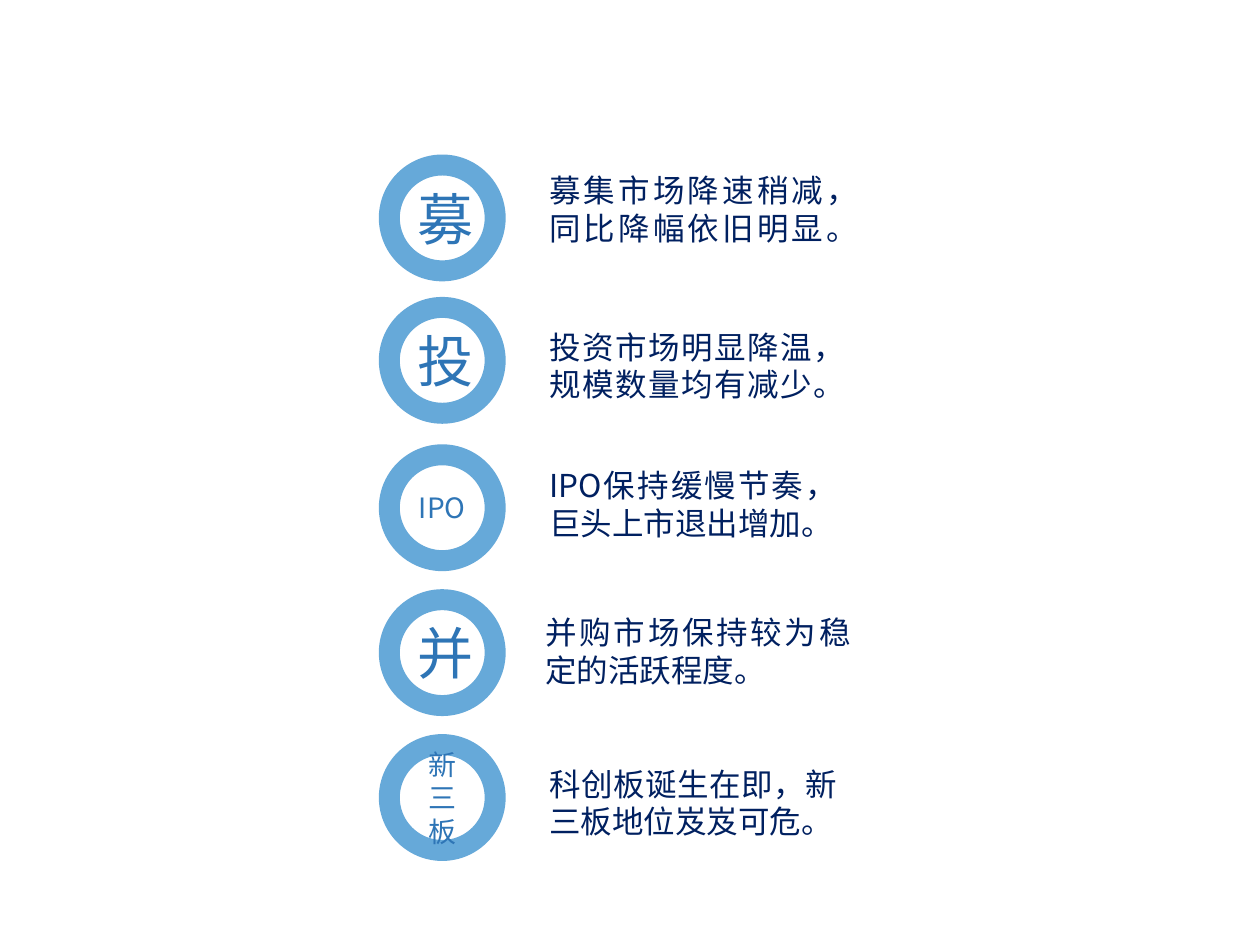
from lxml import etree
from pptx import Presentation
from pptx.dml.color import RGBColor
from pptx.enum.shapes import MSO_SHAPE
from pptx.enum.text import MSO_ANCHOR, MSO_AUTO_SIZE, PP_ALIGN
from pptx.oxml.ns import qn
from pptx.util import Pt

OVAL = MSO_SHAPE.OVAL
MIDDLE = MSO_ANCHOR.MIDDLE
FIT_SHAPE = MSO_AUTO_SIZE.SHAPE_TO_FIT_TEXT
CENTER, JUSTIFY = PP_ALIGN.CENTER, PP_ALIGN.JUSTIFY

RING_BLUE = RGBColor(0x00, 0x70, 0xC0)
LABEL_BLUE = RGBColor(0x2E, 0x75, 0xB6)
NAVY = RGBColor(0x00, 0x20, 0x60)
LABEL_FONT = "Noto Sans CJK JP"
BODY_FONT = "Noto Sans CJK SC"

RING_LEFT, RING_SIZE, RING_WIDTH = 222.5, 60.5, 12
RING_OPACITY = 60
NOTE_HEIGHT = 51

# label, label size, ring top, note, note left, note top, note width
MARKET_ROWS = [
    ("募", 32, 94.3, "募集市场降速稍减，同比降幅依旧明显。", 306.7, 94.3, 172.8),
    ("投", 32, 175.7, "投资市场明显降温，规模数量均有减少。", 306.7, 183.6, 165.6),
    ("IPO", 16, 259.9, "IPO保持缓慢节奏，巨头上市退出增加。", 306.7, 262.8, 178.6),
    ("并", 32, 342.7, "并购市场保持较为稳定的活跃程度。", 304.6, 347, 188.6),
    ("新三板", 16, 425.5, "科创板诞生在即，新三板地位岌岌可危。", 306.7, 433.4, 178.6),
]


def write_text(frame, text, *, size, font, color, align):
    """Write one formatted paragraph into a text frame."""
    frame.word_wrap = True
    para = frame.paragraphs[0]
    para.alignment = align
    span = para.add_run()
    span.text = text
    span.font.size = Pt(size)
    span.font.name = font
    span.font.color.rgb = color
    east_asian = etree.SubElement(span.font._element, qn("a:ea"))
    east_asian.set("typeface", font)


def add_ring(page, label, size, left, top, diameter):
    """Draw a translucent ring with its label in the given square."""
    ring = page.shapes.add_shape(OVAL, Pt(left), Pt(top), Pt(diameter), Pt(diameter))
    ring.shadow.inherit = False
    ring.fill.background()
    ring.line.width = Pt(RING_WIDTH)
    ring.line.color.rgb = RING_BLUE
    color = ring.line._ln.find(".//" + qn("a:srgbClr"))
    etree.SubElement(color, qn("a:alpha")).set("val", str(RING_OPACITY * 1000))
    ring.text_frame.vertical_anchor = MIDDLE
    write_text(ring.text_frame, label, size=size, font=LABEL_FONT,
               color=LABEL_BLUE, align=CENTER)


def add_note(page, text, left, top, width, height):
    """Place a justified market note in the given box."""
    box = page.shapes.add_textbox(Pt(left), Pt(top), Pt(width), Pt(height))
    write_text(box.text_frame, text, size=18, font=BODY_FONT,
               color=NAVY, align=JUSTIFY)
    box.text_frame.auto_size = FIT_SHAPE


def main():
    """Build the market summary slide."""
    deck = Presentation()
    deck.slide_width, deck.slide_height = Pt(720), Pt(540)
    page = deck.slides.add_slide(deck.slide_layouts[6])
    for label, size, ring_top, note, left, top, width in MARKET_ROWS:
        add_ring(page, label, size, RING_LEFT, ring_top, RING_SIZE)
        add_note(page, note, left, top, width, NOTE_HEIGHT)
    deck.save("out.pptx")


if __name__ == "__main__":
    main()
